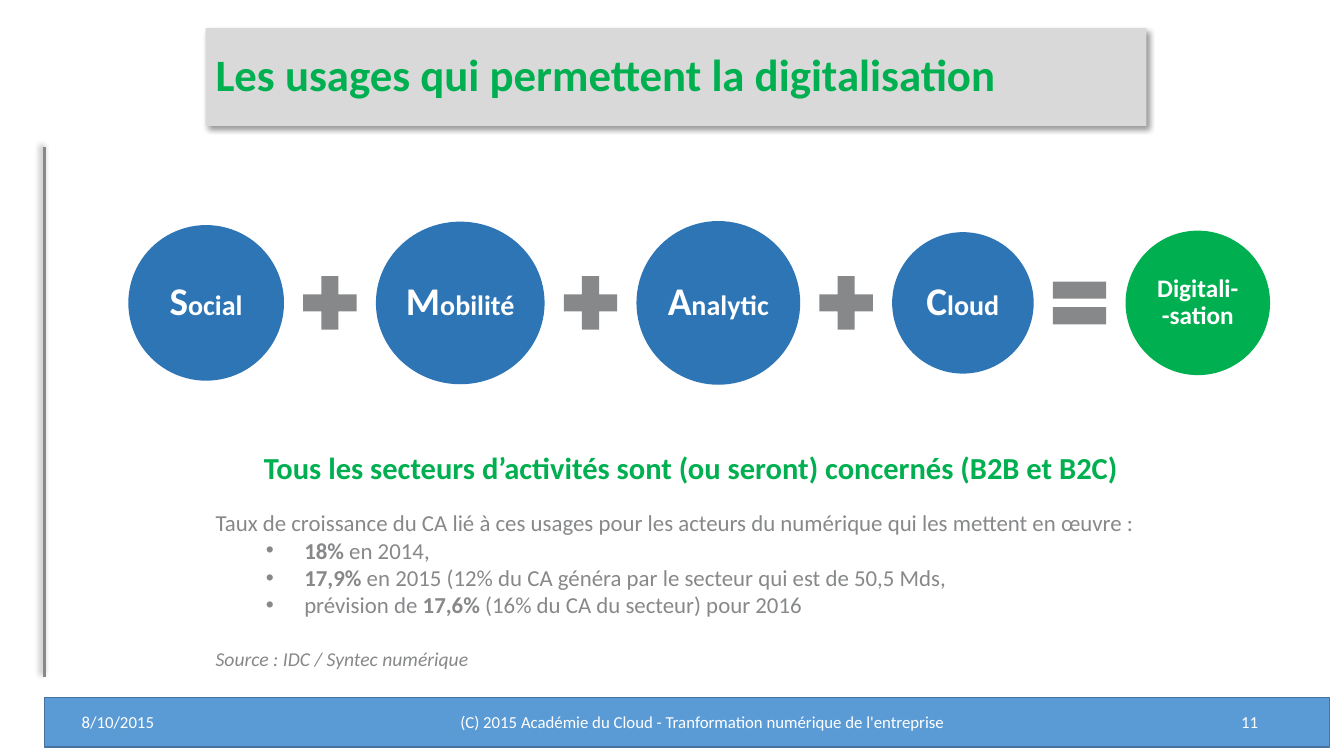
"""Build the slide on the uses that make digitalisation possible."""
from lxml import etree
from pptx import Presentation
from pptx.dml.color import RGBColor
from pptx.enum.shapes import MSO_CONNECTOR, MSO_SHAPE
from pptx.enum.text import MSO_ANCHOR, PP_ALIGN
from pptx.oxml.ns import qn
from pptx.util import Inches, Pt

RECTANGLE, OVAL = MSO_SHAPE.RECTANGLE, MSO_SHAPE.OVAL
PLUS, EQUAL = MSO_SHAPE.MATH_PLUS, MSO_SHAPE.MATH_EQUAL
LEFT, CENTER, RIGHT = PP_ALIGN.LEFT, PP_ALIGN.CENTER, PP_ALIGN.RIGHT
TOP, MIDDLE = MSO_ANCHOR.TOP, MSO_ANCHOR.MIDDLE
STRAIGHT = MSO_CONNECTOR.STRAIGHT

WHITE = RGBColor(0xFF, 0xFF, 0xFF)
GREY = RGBColor(0x87, 0x88, 0x8A)
PALE_GREY = RGBColor(0xD9, 0xD9, 0xD9)
GREEN = RGBColor(0x00, 0xB0, 0x50)
BLUE = RGBColor(0x2E, 0x75, 0xB6)
BAR_BLUE = RGBColor(0x5B, 0x9B, 0xD5)
BAR_EDGE = RGBColor(0x43, 0x73, 0x9E)

deck = Presentation()
deck.slide_width, deck.slide_height = Inches(13.33), Inches(7.5)
COLUMN, ROW = deck.slide_width / 100, deck.slide_height / 100
page = deck.slides.add_slide(deck.slide_layouts[6])


def add_box(kind, left, top, width, height, fill=None, edge=None, anchor=MIDDLE):
    """Add a shape, or a text box when kind is None, measured in columns and rows."""
    frame = [round(size) for size in (left * COLUMN, top * ROW, width * COLUMN, height * ROW)]
    if kind is None:
        box = page.shapes.add_textbox(*frame)
    else:
        box = page.shapes.add_shape(kind, *frame)
        box.fill.solid()
        box.fill.fore_color.rgb = fill
        if edge is None:
            box.line.fill.background()
        else:
            box.line.color.rgb = edge
            box.line.width = Pt(1)
        box.shadow.inherit = False
    box.text_frame.word_wrap = True
    box.text_frame.vertical_anchor = anchor
    return box


def write(para, spans, color, align=LEFT):
    """Fill a paragraph with spans of (text, size, bold)."""
    para.alignment = align
    for text, size, bold in spans:
        span = para.add_run()
        span.text = text
        span.font.name = "Calibri"
        span.font.size = Pt(size)
        span.font.bold = bold
        span.font.color.rgb = color


add_box(RECTANGLE, 3.3, 92.27, 95.63, 6.53, BAR_BLUE, BAR_EDGE)
side_rule = page.shapes.add_connector(
    STRAIGHT, round(3.3 * COLUMN), round(19.47 * ROW), round(3.3 * COLUMN), round(89.6 * ROW))
side_rule.line.color.rgb = GREY
side_rule.line.width = Pt(2)
etree.SubElement(side_rule._element.spPr, qn("a:effectLst"))

title = add_box(RECTANGLE, 15.3, 3.73, 70, 12.93, PALE_GREY)
title_para = title.text_frame.paragraphs[0]
title_para.line_spacing = 0.9
write(title_para, [("Les usages qui permettent la digitalisation", 32, True)], GREEN)

for shape, degrees in ((side_rule, 225), (title, 45)):
    effects = shape._element.spPr.find(qn("a:effectLst"))
    shadow = etree.SubElement(
        effects, qn("a:outerShdw"), blurRad=str(Pt(4)), dist=str(Pt(3)),
        dir=str(degrees * 60000), algn="ctr", rotWithShape="0")
    tint = etree.SubElement(shadow, qn("a:srgbClr"), val="000000")
    etree.SubElement(tint, qn("a:alpha"), val="40000")

for text, left, width, align in (
    ("8/10/2015", 5.33, 8.63, LEFT),
    ("(C) 2015 Académie du Cloud - Tranformation numérique de l'entreprise", 16.05, 72.45, CENTER),
    ("11", 90.45, 3.9, RIGHT),
):
    footer = add_box(None, left, 94, width, 3.07)
    write(footer.text_frame.paragraphs[0], [(text, 12, False)], WHITE, align)

AXIS, GAP, SIGN_WIDTH, SIGN_HEIGHT = 40.07, 0.77, 5.4, 9.6
left = 9.6
for spans, width, height, fill, sign in (
    ([("S", 28, True), ("ocial", 20, True)], 11.48, 20.4, BLUE, PLUS),
    ([("M", 28, True), ("obilité", 20, True)], 12.45, 21.33, BLUE, PLUS),
    ([("A", 28, True), ("nalytic", 20, True)], 12.08, 21.47, BLUE, PLUS),
    ([("C", 28, True), ("loud", 20, True)], 10.43, 18.53, BLUE, EQUAL),
    ([("Digitali-", 18, True), ("-sation", 18, True)], 10.65, 18.93, GREEN, None),
):
    circle = add_box(OVAL, left, AXIS - height / 2, width, height, fill, fill)
    frame = circle.text_frame
    frame.margin_left = frame.margin_right = frame.margin_top = frame.margin_bottom = 0
    para = frame.paragraphs[0]
    para.line_spacing = 0.9
    if sign is None:
        write(para, spans[:1], WHITE, CENTER)
        para.add_line_break()
        write(para, spans[1:], WHITE, CENTER)
    else:
        write(para, spans, WHITE, CENTER)
        left += width + GAP
        add_box(sign, left, AXIS - SIGN_HEIGHT / 2, SIGN_WIDTH, SIGN_HEIGHT, GREY)
        left += SIGN_WIDTH + GAP

growth = add_box(None, 15.3, 66.67, 72.53, 22.8, anchor=TOP).text_frame
write(growth.paragraphs[0], [(
    "Taux de croissance du CA lié à ces usages pour les acteurs du numérique "
    "qui les mettent en œuvre :", 16.3, False)], GREY)
for parts in (
    [("18%", True), (" en 2014,", False)],
    [("17,9% ", True), ("en 2015 (12% du CA généra par le secteur qui est de 50,5 Mds,", False)],
    [("prévision de ", False), ("17,6%", True), (" (16% du CA du secteur) pour 2016", False)],
):
    para = growth.add_paragraph()
    para.level = 1
    properties = para._p.get_or_add_pPr()
    properties.set("marL", str(Inches(0.88)))
    properties.set("indent", str(Inches(-0.38)))
    etree.SubElement(properties, qn("a:buFont"), typeface="Arial")
    etree.SubElement(properties, qn("a:buChar"), char="•")
    write(para, [(text, 16.3, bold) for text, bold in parts], GREY)

source = growth.add_paragraph()
source.space_before = Pt(20)
write(source, [("Source : IDC / Syntec numérique", 14, False)], GREY)
source.runs[0].font.italic = True

headline = add_box(None, 13.2, 58.8, 76.5, 6.27, anchor=TOP)
write(headline.text_frame.paragraphs[0], [(
    "Tous les secteurs d’activités sont (ou seront) concernés (B2B et B2C)", 21.8, True)],
    GREEN, CENTER)

deck.save("out.pptx")
